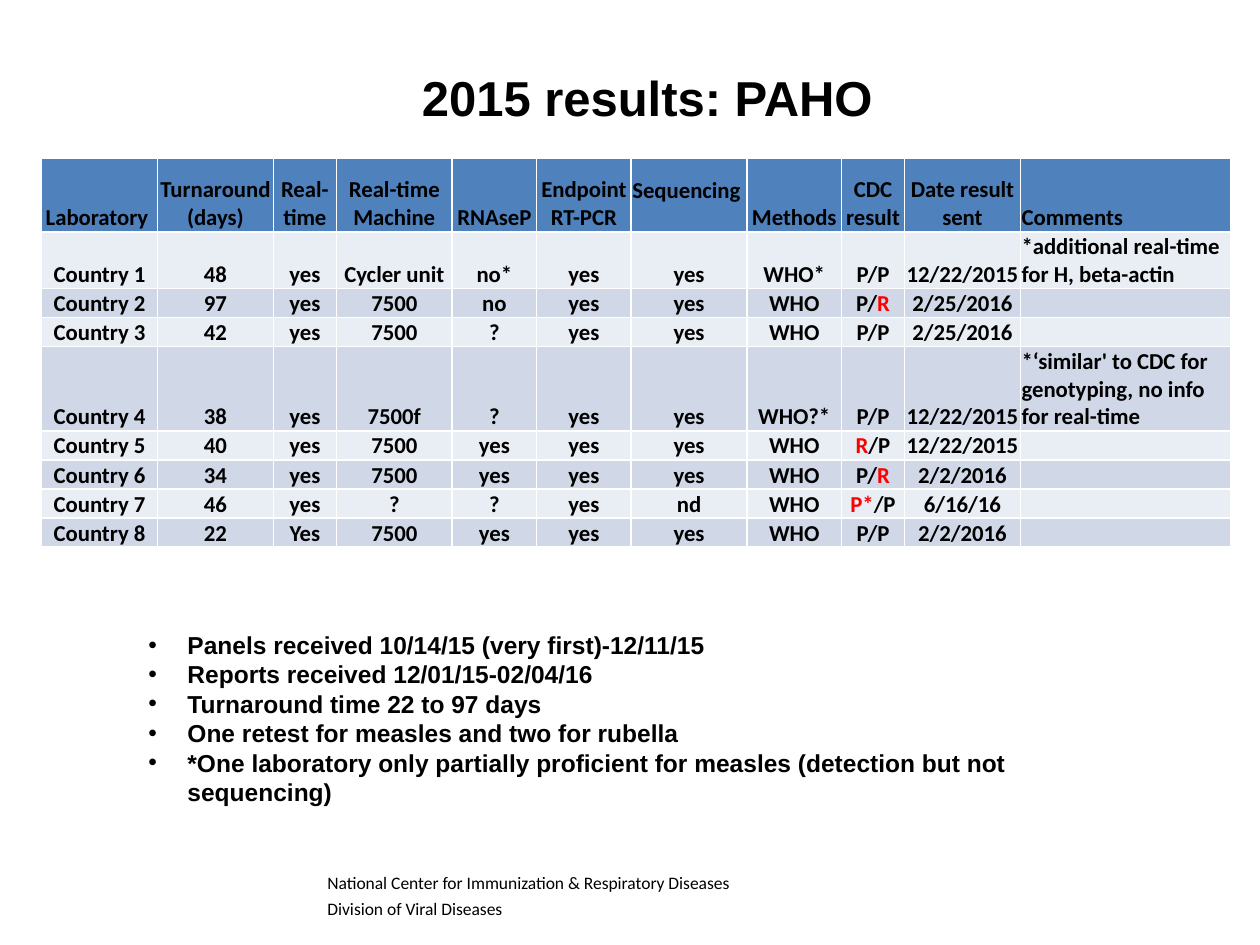
"""Build the 2015 PAHO laboratory results slide."""
from typing import NamedTuple

from lxml.etree import SubElement
from pptx import Presentation
from pptx.dml.color import RGBColor
from pptx.enum.text import MSO_ANCHOR as Anchor, MSO_AUTO_SIZE as AutoSize, PP_ALIGN as Align
from pptx.oxml.ns import qn
from pptx.util import Inches, Pt

BLACK = RGBColor(0x00, 0x00, 0x00)
RED = RGBColor(0xFF, 0x00, 0x00)
HEADER_BLUE = RGBColor(0x4F, 0x81, 0xBD)
PALE_BAND = RGBColor(0xE9, 0xED, 0xF4)
DARK_BAND = RGBColor(0xD0, 0xD8, 0xE8)
BORDER = RGBColor(0xFF, 0xFF, 0xFF)


class Column(NamedTuple):
    heading: str
    width: float


class Lab(NamedTuple):
    country: str
    days: str
    realtime: str
    machine: str
    rnasep: str
    endpoint: str
    sequencing: str
    methods: str
    cdc_result: str
    date_sent: str
    comments: str = ""
    flagged: str = ""


class Label(NamedTuple):
    lines: tuple[str, ...]
    left: float
    top: float
    width: float
    height: float
    size: float
    font: str
    bold: bool = False
    bullet: str = ""
    wrap: bool = True
    grow: bool = False


COLUMNS = (
    Column("Laboratory ", 0.92), Column("Turnaround (days)", 0.92), Column("Real-time", 0.5),
    Column("Real-time Machine", 0.92), Column("RNAseP", 0.67), Column("Endpoint RT-PCR", 0.75),
    Column("Sequencing", 0.92), Column("Methods", 0.75), Column("CDC result", 0.5),
    Column("Date result sent", 0.92), Column("Comments", 1.67),
)
RESULT_COLUMN = Lab._fields.index("cdc_result")
SEQUENCING_COLUMN = Lab._fields.index("sequencing")
COMMENTS_COLUMN = Lab._fields.index("comments")

LABS = (
    Lab("Country 1", "48", "yes", "Cycler unit", "no*", "yes", "yes", "WHO*", "P/P",
        "12/22/2015", "*additional real-time for H, beta-actin"),
    Lab("Country 2", "97", "yes", "7500", "no", "yes", "yes", "WHO", "P/R", "2/25/2016", flagged="R"),
    Lab("Country 3", "42", "yes", "7500", "?", "yes", "yes", "WHO", "P/P", "2/25/2016"),
    Lab("Country 4", "38", "yes", "7500f", "?", "yes", "yes", "WHO?*", "P/P",
        "12/22/2015", "*‘similar' to CDC for genotyping, no info for real-time"),
    Lab("Country 5", "40", "yes", "7500", "yes", "yes", "yes", "WHO", "R/P", "12/22/2015", flagged="R"),
    Lab("Country 6", "34", "yes", "7500", "yes", "yes", "yes", "WHO", "P/R", "2/2/2016", flagged="R"),
    Lab("Country 7", "46", "yes", "?", "?", "yes", "nd", "WHO", "P*/P", "6/16/16", flagged="P*"),
    Lab("Country 8", "22", "Yes", "7500", "yes", "yes", "yes", "WHO", "P/P", "2/2/2016"),
)

LABELS = (
    Label(("National Center for Immunization & Respiratory Diseases",),
          2.5, 6.87, 5.58, 0.2, 10, "Calibri"),
    Label(("Division of Viral Diseases",), 2.5, 7.08, 5.58, 0.25, 10, "Calibri"),
    Label(("2015 results: PAHO",), 3.25, 0.49, 3.82, 0.57, 28, "Arial", bold=True,
          wrap=False, grow=True),
    Label(("Panels received 10/14/15 (very first)-12/11/15",
           "Reports received 12/01/15-02/04/16",
           "Turnaround time 22 to 97 days",
           "One retest for measles and two for rubella",
           "*One laboratory only partially proficient for measles (detection but not sequencing)"),
          1.08, 4.95, 7.33, 1.51, 14, "Arial", bold=True, bullet="•", grow=True),
)


def write(paragraph, text: str, *, size: float, font: str, bold: bool = False,
          align: Align = Align.LEFT, bullet: str = "", flagged: str = "") -> None:
    """Fill a paragraph, showing its flagged part in red."""
    paragraph.alignment = align
    if bullet:
        properties = paragraph._p.get_or_add_pPr()
        properties.set("marL", str(Inches(0.31)))
        properties.set("indent", str(-Inches(0.31)))
        SubElement(properties, qn("a:buFont"), typeface="Arial")
        SubElement(properties, qn("a:buChar"), char=bullet)
    before, mark, after = text.partition(flagged) if flagged else (text, "", "")
    for part, color in ((before, BLACK), (mark, RED), (after, BLACK)):
        if part:
            run = paragraph.add_run()
            run.text = part
            run.font.size, run.font.name, run.font.bold = Pt(size), font, bold
            run.font.color.rgb = color
    if not text:
        SubElement(paragraph._p, qn("a:endParaRPr"), sz=str(size * 100))


def add_label(slide, label: Label) -> None:
    """Place a text box with one paragraph per line."""
    box = slide.shapes.add_textbox(Inches(label.left), Inches(label.top),
                                   Inches(label.width), Inches(label.height))
    frame = box.text_frame
    frame.word_wrap = label.wrap
    frame.auto_size = AutoSize.SHAPE_TO_FIT_TEXT if label.grow else AutoSize.NONE
    for index, line in enumerate(label.lines):
        paragraph = frame.add_paragraph() if index else frame.paragraphs[0]
        write(paragraph, line, size=label.size, font=label.font, bold=label.bold,
              bullet=label.bullet)


def style_cell(cell, fill: RGBColor) -> None:
    """Give a cell white borders, tight margins and a fill."""
    properties = cell._tc.get_or_add_tcPr()
    for side in ("lnL", "lnR", "lnT", "lnB"):
        line = SubElement(properties, qn(f"a:{side}"), w=str(Pt(1)))
        SubElement(SubElement(line, qn("a:solidFill")), qn("a:srgbClr"), val=str(BORDER))
    cell.fill.solid()
    cell.fill.fore_color.rgb = fill
    cell.margin_left = cell.margin_right = cell.margin_top = Inches(0.01)
    cell.margin_bottom = 0
    cell.vertical_anchor = Anchor.BOTTOM


def add_results(slide) -> None:
    """Draw the table of laboratory results."""
    table = slide.shapes.add_table(len(LABS) + 1, len(COLUMNS), Inches(0.33), Inches(1.26),
                                   Inches(9.42), Inches(3.03)).table
    for column, spec_column in zip(table.columns, COLUMNS):
        column.width = Inches(spec_column.width)
    headings = tuple(column.heading for column in COLUMNS)
    for row, values in enumerate((headings, *LABS)):
        table.rows[row].height = Inches(0.17 if row else 0.58)
        fill = (PALE_BAND if row % 2 else DARK_BAND) if row else HEADER_BLUE
        for column, text in enumerate(values[:len(COLUMNS)]):
            cell = table.cell(row, column)
            style_cell(cell, fill)
            raised = row == 0 and column == SEQUENCING_COLUMN
            if raised:
                cell.margin_bottom = Inches(0.22)
            flagged = values.flagged if row and column == RESULT_COLUMN else ""
            align = Align.LEFT if raised or column == COMMENTS_COLUMN else Align.CENTER
            write(cell.text_frame.paragraphs[0], text, size=13, font="Calibri", bold=True,
                  align=align, flagged=flagged)


def main() -> None:
    """Create and save the slide."""
    deck = Presentation()
    deck.slide_width, deck.slide_height = Inches(10), Inches(7.5)
    slide = deck.slides.add_slide(deck.slide_layouts[6])
    add_results(slide)
    for label in LABELS:
        add_label(slide, label)
    deck.save("out.pptx")


if __name__ == "__main__":
    main()
